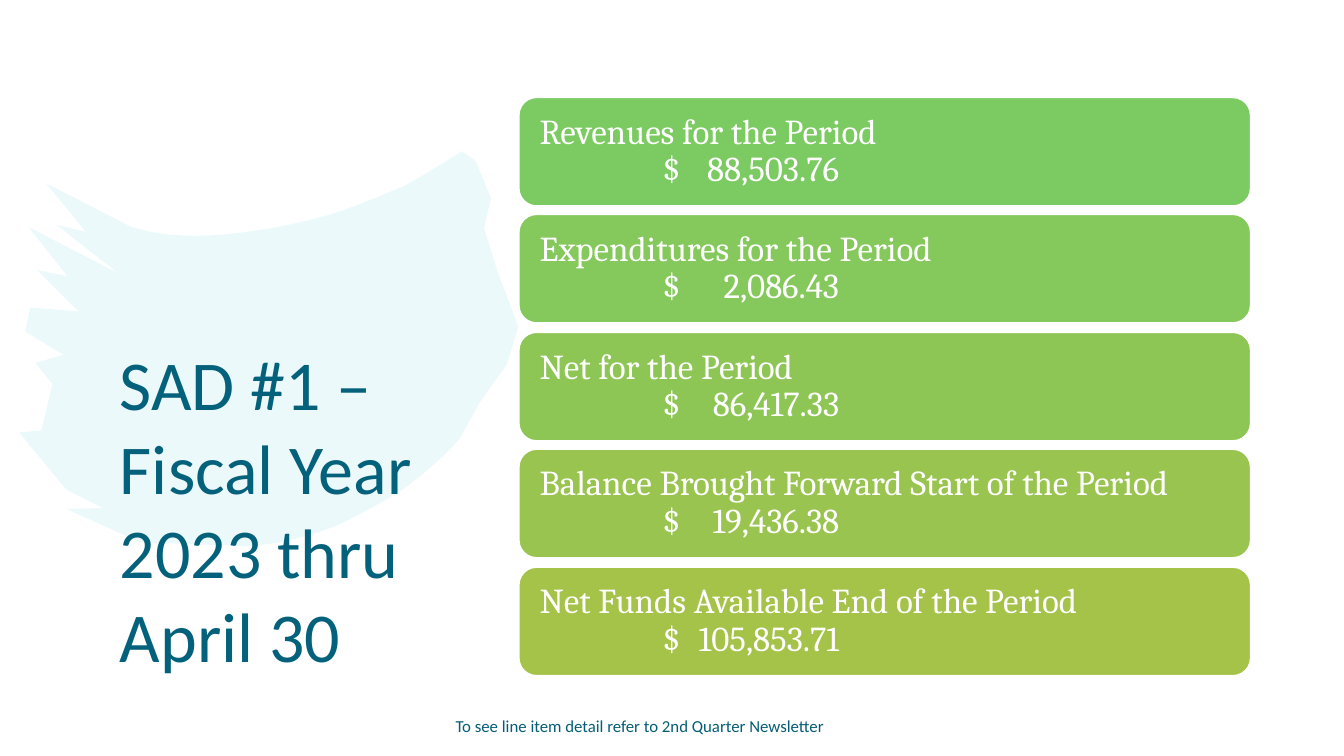
from pptx import Presentation
from pptx.dml.color import RGBColor
from pptx.enum.shapes import MSO_SHAPE as SHAPE
from pptx.enum.text import MSO_ANCHOR as ANCHOR, PP_ALIGN as ALIGN
from pptx.oxml.ns import qn
from pptx.util import Pt
from lxml import etree

PX = 9144  # 100 px to the inch

WHITE = RGBColor(0xFF, 0xFF, 0xFF)
BRUSH = RGBColor(0xDB, 0xF5, 0xF9)
TITLE = RGBColor(0x04, 0x61, 0x7B)
NOTE = RGBColor(0x04, 0x5D, 0x75)

# Label, amount and fill of each card
CARDS = [
    ("Revenues for the Period", "88,503.76", RGBColor(0x7C, 0xCA, 0x62)),
    ("Expenditures for the Period", "2,086.43", RGBColor(0x85, 0xC8, 0x5C)),
    ("Net for the Period", "86,417.33", RGBColor(0x8E, 0xC6, 0x56)),
    ("Balance Brought Forward Start of the Period", "19,436.38",
     RGBColor(0x99, 0xC4, 0x4F)),
    ("Net Funds Available End of the Period", "105,853.71",
     RGBColor(0xA5, 0xC2, 0x49)),
]

# Brush stroke: corners of its ragged ends, and Bezier controls of its edges
RIGHT_END = [(458, 150), (472, 160), (487, 197), (480, 226), (493, 268),
             (514, 324), (503, 361), (476, 399)]
LOWER_EDGE = [(456, 435), (456, 436), (372, 533), (249, 542)]
LEFT_END = [(139, 538), (66, 505), (102, 504), (66, 486), (19, 429),
            (41, 427), (52, 381), (35, 360), (63, 352), (25, 329),
            (30, 305), (78, 309), (37, 268), (67, 274), (28, 225),
            (117, 271), (56, 223), (85, 230), (46, 182)]
UPPER_EDGE = [(130, 225), (200, 250), (342, 220), (423, 172)]


def curve(controls, steps=12):
    a, b, c, d = controls
    for i in range(steps + 1):
        t = i / steps
        u = 1 - t
        yield tuple(u**3 * a[k] + 3 * u * u * t * b[k]
                    + 3 * u * t * t * c[k] + t**3 * d[k] for k in (0, 1))


def box(*lengths):
    return [n * PX for n in lengths]


def set_all(target, values):
    for name, value in values.items():
        setattr(target, name, value)


def write(p, text, font, size, color):
    r = p.add_run()
    r.text = text
    set_all(r.font, {"name": font, "size": Pt(size)})
    r.font.color.rgb = color


def add_tabs(p, stops):
    tabs = etree.SubElement(p._p.get_or_add_pPr(), qn("a:tabLst"))
    for pos, align in stops:
        etree.SubElement(tabs, qn("a:tab"), pos=str(pos * PX), algn=align)


def add_brush(s):
    points = [*RIGHT_END, *curve(LOWER_EDGE), *LEFT_END, *curve(UPPER_EDGE)]
    builder = s.shapes.build_freeform(*points[0], scale=PX)
    builder.add_line_segments(points[1:], close=True)
    sp = builder.convert_to_shape()
    sp.shadow.inherit = False
    sp.line.fill.background()
    sp.fill.solid()
    sp.fill.fore_color.rgb = BRUSH
    color = sp._element.spPr.find(f"{qn('a:solidFill')}/{qn('a:srgbClr')}")
    etree.SubElement(color, qn("a:alpha"), val="50000")


def add_text(s, place, text, size, color):
    tf = s.shapes.add_textbox(*box(*place)).text_frame
    set_all(tf, {"word_wrap": True, "vertical_anchor": ANCHOR.BOTTOM})
    write(tf.paragraphs[0], text, "Calibri", size, color)


def add_card(s, top, label, amount, fill):
    sp = s.shapes.add_shape(SHAPE.ROUNDED_RECTANGLE, *box(514, top, 727, 109))
    sp.shadow.inherit = False
    sp.fill.solid()
    sp.fill.fore_color.rgb = fill
    sp.line.color.rgb = WHITE
    sp.line.width = Pt(2)
    tf = sp.text_frame
    set_all(tf, {"word_wrap": True, "vertical_anchor": ANCHOR.MIDDLE,
                 "margin_left": 16 * PX, "margin_right": 16 * PX})
    p = tf.paragraphs[0]
    add_tabs(p, [(122, "l"), (297, "r")])
    set_all(p, {"alignment": ALIGN.LEFT, "line_spacing": 0.9})
    write(p, label, "Cambria", 25, WHITE)
    p.add_line_break()
    write(p, f"\t$\t{amount}", "Cambria", 25, WHITE)


def main():
    prs = Presentation()
    set_all(prs, {"slide_width": 1333 * PX, "slide_height": 750 * PX})
    s = prs.slides.add_slide(prs.slide_layouts[6])

    # Title over the brush stroke, and the note below
    add_brush(s)
    add_text(s, (109, 75, 382, 601),
             "SAD #1 – Fiscal Year 2023 thru April 30", 50, TITLE)
    add_text(s, (442, 695, 450, 40),
             "To see line item detail refer to 2nd Quarter Newsletter", 12, NOTE)

    # Cards, evenly spaced from first to last
    first, last = 96, 562
    for i, card in enumerate(CARDS):
        add_card(s, first + (last - first) * i // (len(CARDS) - 1), *card)

    prs.save("out.pptx")


if __name__ == "__main__":
    main()
